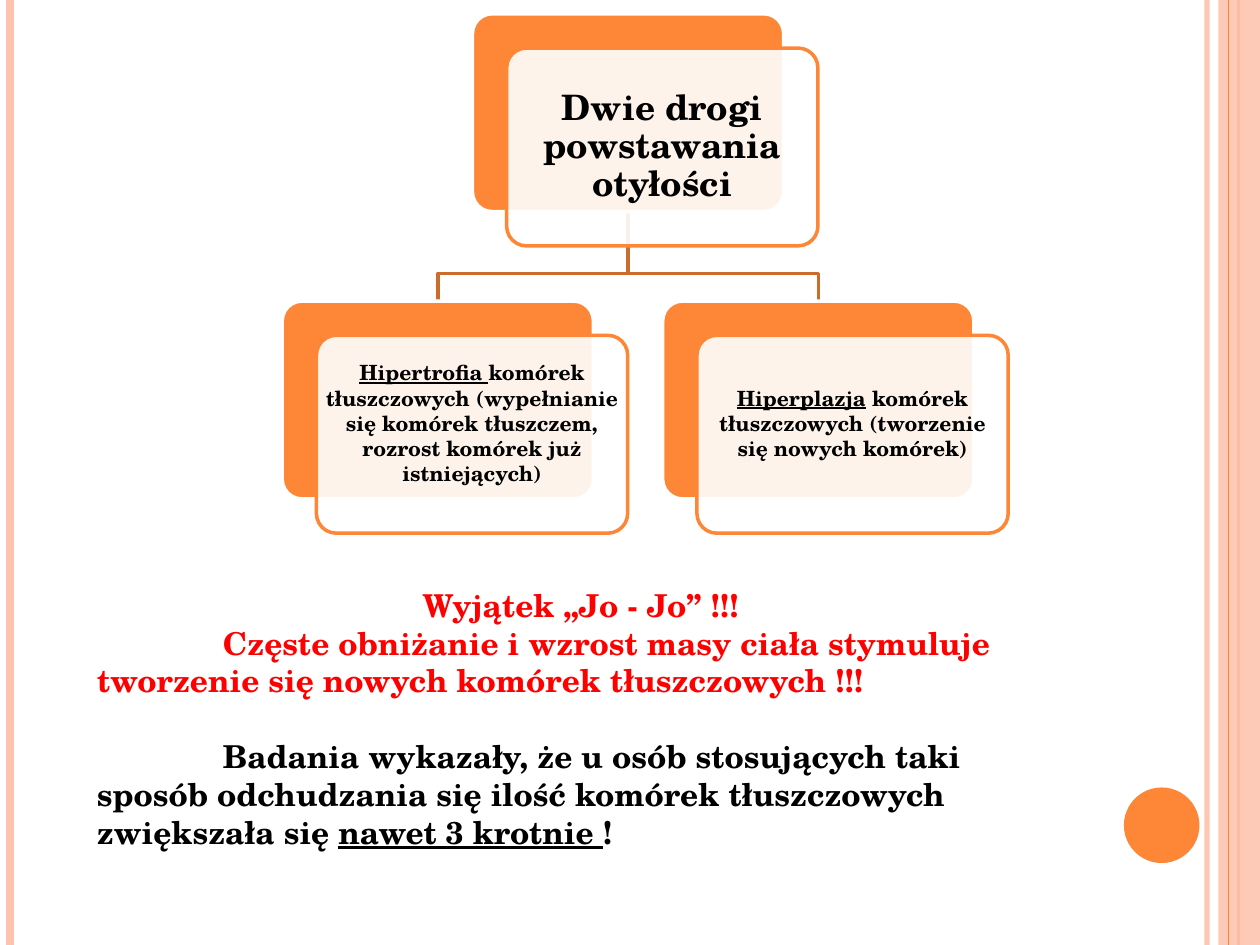
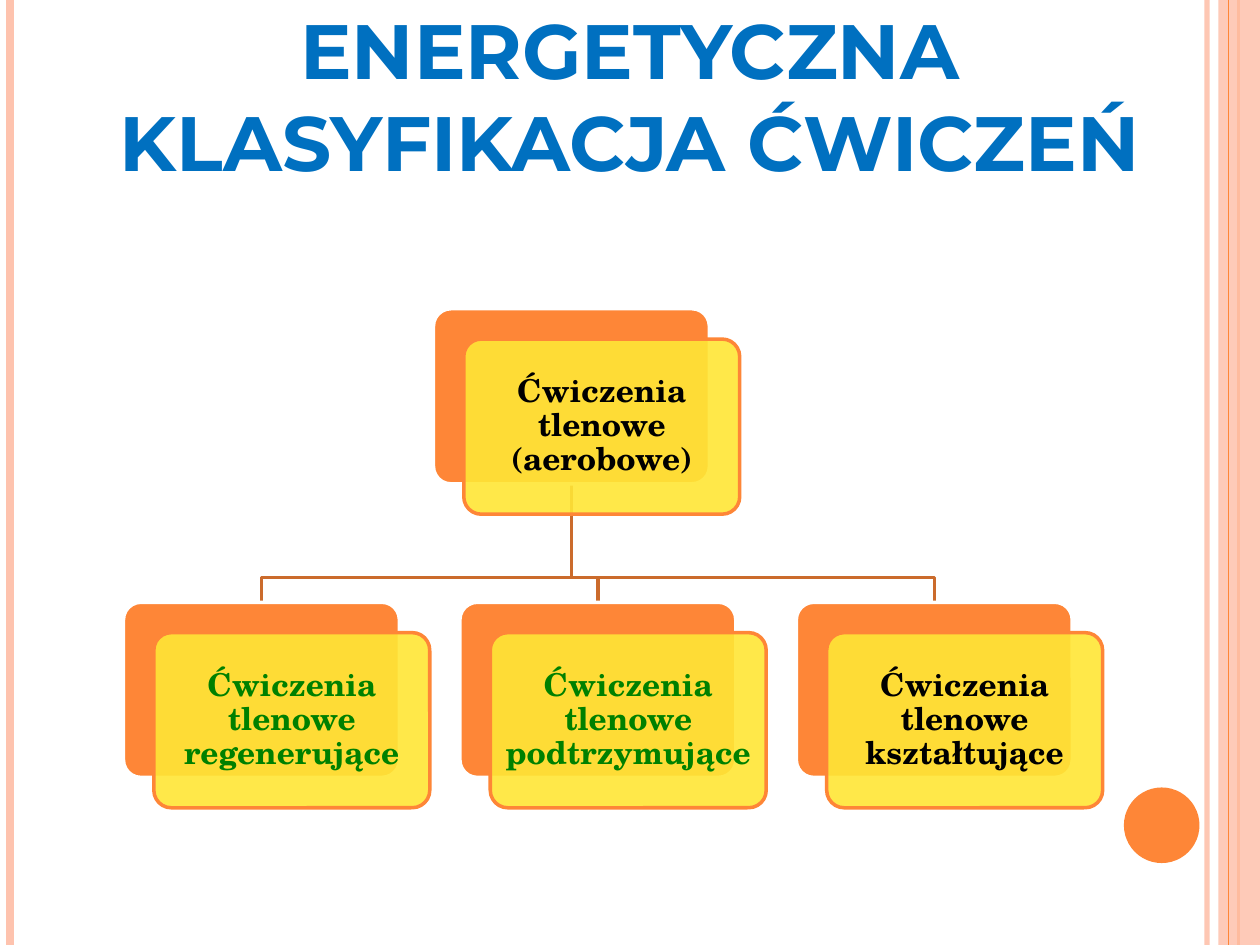
from pptx import Presentation
from pptx.dml.color import RGBColor
from pptx.enum.shapes import MSO_CONNECTOR as Link, MSO_SHAPE as Kind
from pptx.enum.text import MSO_ANCHOR as Anchor, PP_ALIGN as Align
from pptx.oxml.ns import qn
from pptx.oxml.xmlchemy import OxmlElement as Node
from pptx.util import Inches, Pt

ORANGE, PEACH, BROWN = "FE8637", "FEC3AE", "CB6B2C"
WHITE, BLACK, YELLOW = "FFFFFF", "000000", "FFE636"
RED, GREEN, BLUE = "FF0000", "008000", "0070C0"
SERIF, SANS = "TeX Gyre Schola", "Montserrat"


def color(code):
    return RGBColor.from_string(code)


def paint(fill, code, alpha=100):
    fill.solid()
    fill.fore_color.rgb = color(code)
    if alpha < 100:
        mark = Node("a:alpha")
        mark.set("val", str(alpha * 1000))
        fill._xPr.find(qn("a:solidFill"))[0].append(mark)


def apply(item, style):
    for name, value in style.items():
        setattr(item, name, value)


class Deck:
    def __init__(self):
        self.prs = Presentation()
        self.prs.slide_width = Inches(10)
        self.prs.slide_height = Inches(7.5)
        self.slide = None

    def page(self):
        self.slide = self.prs.slides.add_slide(self.prs.slide_layouts[6])
        paint(self.slide.background.fill, WHITE)
        self.rule(9.58, PEACH, 3, 93)
        self.rule(0.08, PEACH, 4.5)
        self.rule(9.83, ORANGE, 1.5)
        self.block(Kind.RECTANGLE, (9.67, 0, 0.33, 7.5), PEACH, 87)
        self.rule(9.75, ORANGE, 0.75)
        self.block(Kind.OVAL, (8.92, 6.25, 0.6, 0.6), ORANGE)

    def rule(self, x, code, width, alpha=100):
        line = self.slide.shapes.add_connector(
            Link.STRAIGHT, Inches(x), 0, Inches(x), Inches(7.5))
        line.line.width = Pt(width)
        paint(line.line.fill, code, alpha)
        line._element.spPr.append(Node("a:effectLst"))

    def block(self, kind, box, code, alpha=100, edge=None):
        shape = self.slide.shapes.add_shape(kind, *map(Inches, box))
        shape.shadow.inherit = False
        paint(shape.fill, code, alpha)
        if edge:
            paint(shape.line.fill, edge)
            shape.line.width = Pt(2)
        else:
            shape.line.fill.background()
        if kind == Kind.ROUNDED_RECTANGLE:
            shape.adjustments[0] = 0.1
        return shape

    def put(self, para, runs, size, code, font=SERIF, **style):
        apply(para, style)
        for text, under in runs:
            run = para.add_run()
            run.text = text
            apply(run.font, {"name": font, "size": Pt(size), "bold": True,
                             "underline": under})
            run.font.color.rgb = color(code)

    def label(self, box):
        frame = self.slide.shapes.add_textbox(*map(Inches, box)).text_frame
        frame.word_wrap = True
        return frame

    def card(self, spot, size, face, runs, points, ink, pad, foot, lead):
        (x, y), (w, h), step = spot, size, 0.11 * size[0]
        self.block(Kind.ROUNDED_RECTANGLE, (x, y, w, h), ORANGE, edge=WHITE)
        front = self.block(Kind.ROUNDED_RECTANGLE, (x + step, y + step, w, h),
                           face, 90, ORANGE)
        frame = front.text_frame
        apply(frame, {"word_wrap": True, "vertical_anchor": Anchor.MIDDLE,
                      "margin_left": Inches(pad), "margin_right": Inches(pad),
                      "margin_top": Inches(pad), "margin_bottom": Inches(pad + foot)})
        self.put(frame.paragraphs[0], runs, points, ink,
                 alignment=Align.CENTER, line_spacing=lead)

    def elbow(self, start, end, size):
        (x, y), (a, b), (w, h) = start, end, size
        mid, bend = w / 2, b - 0.14 * h
        spots = [(x + mid, y + h), (x + mid, bend), (a + mid, bend), (a + mid, b)]
        spots = [tuple(map(Inches, spot)) for spot in spots]
        form = self.slide.shapes.build_freeform(*spots[0], scale=1.0)
        form.add_line_segments(spots[1:], close=False)
        shape = form.convert_to_shape()
        shape.shadow.inherit = False
        shape.fill.background()
        paint(shape.line.fill, BROWN)
        shape.line.width = Pt(2)

    def tree(self, size, face, root, kids, top, left, gap, points, pad, foot, lead):
        spot, runs, big = root
        spots = [(left + i * gap, top) for i in range(len(kids))]
        for end in reversed(spots):
            self.elbow(spot, end, size)
        self.card(spot, size, face, runs, big, BLACK, 0.03, 0, 0.9)
        for end, (text, ink) in zip(spots, kids):
            self.card(end, size, face, text, points, ink, pad, foot, lead)


def causes(deck):
    deck.page()
    frame = deck.label((0.67, 4.6, 7.95, 2.52))
    deck.put(frame.paragraphs[0], [("Wyjątek „Jo - Jo” !!! ", False)], 18, RED,
             alignment=Align.CENTER)
    notes = [
        ([("Częste obniżanie i wzrost masy ciała stymuluje tworzenie się nowych "
           "komórek tłuszczowych !!!", False)], RED, 0),
        ([("Badania wykazały, że u osób stosujących taki sposób odchudzania się "
           "ilość komórek tłuszczowych zwiększała się ", False),
          ("nawet 3 krotnie ", True), ("!", False)], BLACK, 21.6)]
    for runs, ink, space in notes:
        para = frame.add_paragraph()
        deck.put(para, runs, 18, ink, space_before=Pt(space))
        para._p.get_or_add_pPr().set("indent", str(Inches(1)))
    kids = [
        ([("Hipertrofia ", True),
          ("komórek tłuszczowych (wypełnianie się komórek tłuszczem, rozrost "
           "komórek już istniejących)", False)], BLACK),
        ([("Hiperplazja", True),
          (" komórek tłuszczowych (tworzenie się nowych komórek)", False)], BLACK)]
    root = (3.75, 0.11), [("Dwie drogi powstawania otyłości", False)], 20
    deck.tree((2.47, 1.57), WHITE, root, kids, top=2.39, left=2.24, gap=3.02,
              points=12, pad=0, foot=0.18, lead=1.0)


def sports(deck):
    deck.page()
    frame = deck.label((0, -0.03, 10, 1.58))
    deck.put(frame.paragraphs[0], [("ENERGETYCZNA KLASYFIKACJA ĆWICZEŃ", False)],
             44, BLUE, SANS, alignment=Align.CENTER)
    kinds = [("regenerujące", GREEN), ("podtrzymujące", GREEN),
             ("kształtujące", BLACK)]
    kids = [([("Ćwiczenia tlenowe " + kind, False)], ink) for kind, ink in kinds]
    root = (3.44, 2.45), [("Ćwiczenia tlenowe (aerobowe)", False)], 18
    deck.tree((2.19, 1.39), YELLOW, root, kids, top=4.78, left=0.98, gap=2.67,
              points=18, pad=0.03, foot=0, lead=0.9)


def main():
    deck = Deck()
    causes(deck)
    sports(deck)
    deck.prs.save("out.pptx")


if __name__ == "__main__":
    main()
